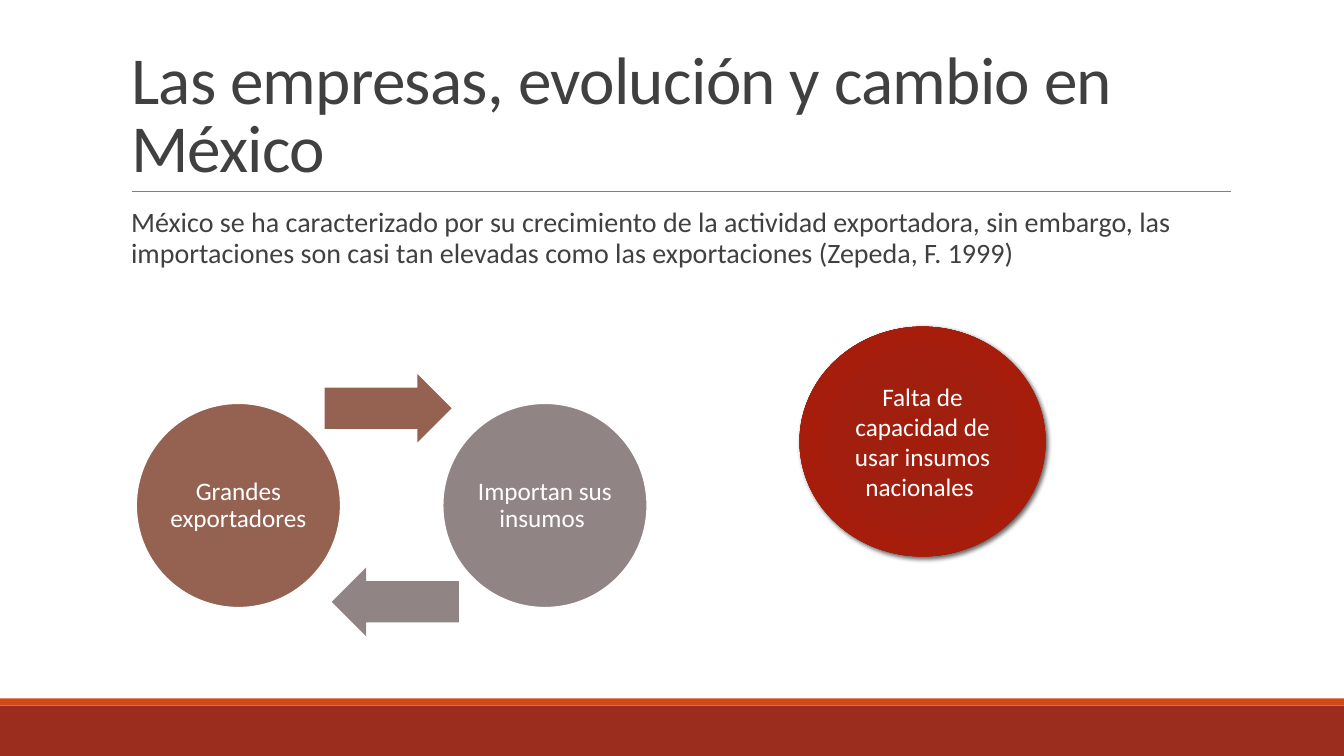
"""Builds the slide on Mexican companies, their exports and their imported supplies."""
from lxml import etree
from pptx import Presentation, util as u
from pptx.dml.color import RGBColor
from pptx.enum import shapes, text
from pptx.oxml import parse_xml
from pptx.oxml.ns import nsdecls, qn

PX = 9144
WHITE, GREY, BROWN, TAUPE = "FFFFFF", "404040", "956251", "918485"


def write(shape, words, size=18, color=WHITE, align=text.PP_ALIGN.CENTER,
          anchor=text.MSO_ANCHOR.MIDDLE, spacing=1.0, before=0, after=0, insets=(10, 5)):
    frame = shape.text_frame
    frame.word_wrap = True
    frame.auto_size = text.MSO_AUTO_SIZE.NONE
    frame.vertical_anchor = anchor
    frame.margin_left = frame.margin_right = insets[0] * PX
    frame.margin_top = frame.margin_bottom = insets[1] * PX
    paragraph = frame.paragraphs[0]
    paragraph.alignment = align
    paragraph.line_spacing = spacing
    paragraph.space_before, paragraph.space_after = u.Pt(before), u.Pt(after)
    run = paragraph.add_run()
    run.text = words
    run.font.name, run.font.size = "Calibri", u.Pt(size)
    run.font.color.rgb = RGBColor.from_string(color)
    return paragraph


def add_figure(kind, left, top, width, height, fill, line=None):
    shape = slide.shapes.add_shape(kind, left * PX, top * PX, width * PX, height * PX)
    shape.shadow.inherit = False
    shape.fill.solid()
    shape.fill.fore_color.rgb = RGBColor.from_string(fill)
    if line:
        shape.line.color.rgb = RGBColor.from_string(line)
        shape.line.width = u.Pt(1.25)
    else:
        shape.line.fill.background()
    return shape


presentation = Presentation()
presentation.slide_width, presentation.slide_height = 1333 * PX, 750 * PX
slide = presentation.slides.add_slide(presentation.slide_layouts[1])
kinds = shapes.MSO_SHAPE

add_figure(kinds.RECTANGLE, 0, 700, 1333, 50, "9B2D1F")
add_figure(kinds.RECTANGLE, 0, 693, 1333, 7, "D34817")

rule = slide.shapes.add_connector(shapes.MSO_CONNECTOR.STRAIGHT, 131 * PX, 190 * PX, 1221 * PX, 190 * PX)
rule.line.color.rgb = RGBColor.from_string("808080")
rule.line.width = u.Pt(0.5)
etree.SubElement(rule._element.spPr, qn("a:effectLst"))

title, body = slide.placeholders
for placeholder, top, height in ((title, 31, 159), (body, 202, 440)):
    placeholder.left, placeholder.top = 120 * PX, top * PX
    placeholder.width, placeholder.height = 1100 * PX, height * PX

heading = write(title, "Las empresas, evolución y cambio en México", size=48, color=GREY,
                align=text.PP_ALIGN.LEFT, anchor=text.MSO_ANCHOR.BOTTOM, spacing=0.85)
heading.runs[0].font._element.set("spc", "-50")

statement = write(body, "México se ha caracterizado por su crecimiento de la actividad exportadora, "
                  "sin embargo, las importaciones son casi tan elevadas como las exportaciones "
                  "(Zepeda, F. 1999)", size=20, color=GREY, align=text.PP_ALIGN.LEFT,
                  anchor=text.MSO_ANCHOR.TOP, spacing=0.9, before=12, after=2, insets=(0, 5))
properties = statement._p.get_or_add_pPr()
properties.set("marL", str(10 * PX))
properties.set("indent", "0")
etree.SubElement(properties, qn("a:buNone"))

cycle = (
    ("Grandes exportadores ", BROWN, 135, 322, 371, 0),
    ("Importan sus insumos ", TAUPE, 439, 329, 563, 180),
)
for words, color, circle_left, arrow_left, arrow_top, rotation in cycle:
    circle = add_figure(kinds.OVAL, circle_left, 400, 203, 203, color, line=WHITE)
    write(circle, words, spacing=0.9, insets=(3, 3))
    arrow = add_figure(kinds.RIGHT_ARROW, arrow_left, arrow_top, 126, 68, color)
    arrow.adjustments[0], arrow.adjustments[1] = 0.6, 0.5
    arrow.rotation = rotation

shortage = add_figure(kinds.OVAL, 793, 324, 244, 228, "A21D0C")
write(shortage, "Falta de capacidad de usar insumos nacionales ")
stops = "".join(
    f'<a:gs pos="{position * 1000}"><a:srgbClr val="{color}"/></a:gs>'
    for position, color in ((0, "A21D0C"), (34, "A01F0F"), (70, "A61D0C"), (100, "A12819")))
gradient = parse_xml(
    f'<a:gradFill {nsdecls("a")} rotWithShape="1"><a:gsLst>{stops}</a:gsLst><a:path path="circle">'
    '<a:fillToRect l="100000" t="100000" r="100000" b="100000"/></a:path></a:gradFill>')
shadow = parse_xml(
    f'<a:outerShdw {nsdecls("a")} blurRad="44450" dist="25400" dir="2700000" algn="br" rotWithShape="0">'
    '<a:srgbClr val="000000"><a:alpha val="60000"/></a:srgbClr></a:outerShdw>')
outline = shortage._element.spPr
outline.replace(outline.find(qn("a:solidFill")), gradient)
outline.find(qn("a:effectLst")).append(shadow)

presentation.save("out.pptx")
